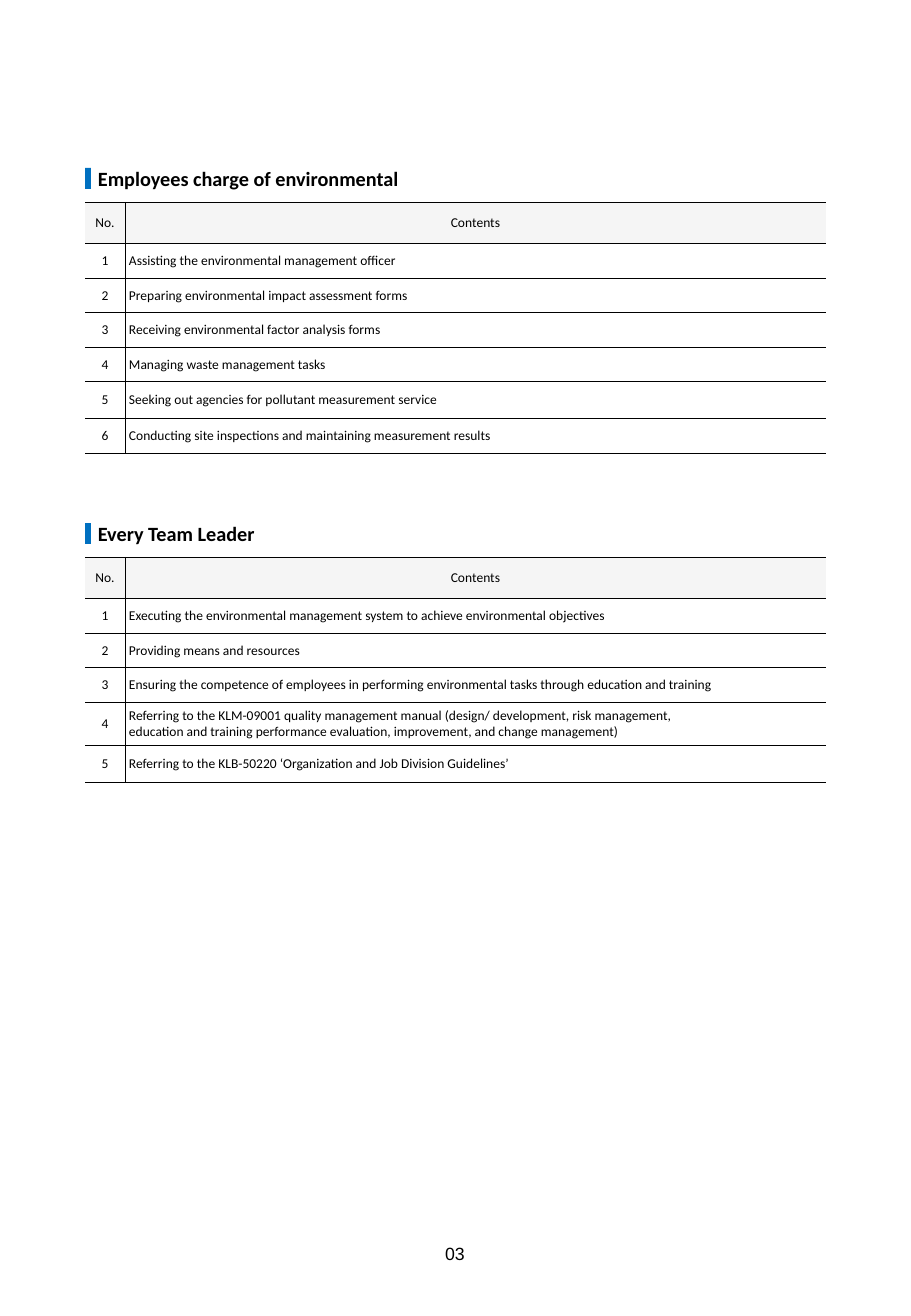
from lxml.etree import SubElement
from pptx import Presentation
from pptx.dml.color import RGBColor
from pptx.enum.shapes import MSO_SHAPE as Preset
from pptx.enum.text import MSO_ANCHOR as Anchor, PP_ALIGN as Align
from pptx.oxml.ns import qn
from pptx.util import Pt

PX = 7526
COLORS = {"ink": "000000", "accent": "0070C0", "header": "F5F5F5", "paper": "FFFFFF"}
HEADER_HEIGHT = 41
NUMBER_WIDTH = 40

SECTIONS = [
    (160, "Employees charge of environmental", [
        (35, "Assisting the environmental management officer"),
        (34, "Preparing environmental impact assessment forms"),
        (35, "Receiving environmental factor analysis forms"),
        (34, "Managing waste management tasks"),
        (37, "Seeking out agencies for pollutant measurement service"),
        (35, "Conducting site inspections and maintaining measurement results"),
    ]),
    (515, "Every Team Leader", [
        (35, "Executing the environmental management system to achieve environmental objectives"),
        (34, "Providing means and resources"),
        (35, "Ensuring the competence of employees in performing environmental tasks "
             "through education and training"),
        (43, "Referring to the KLM-09001 quality management manual "
             "(design/ development, risk management,\n"
             "education and training performance evaluation, improvement, and change management)"),
        (37, "Referring to the KLB-50220 ‘Organization and Job Division Guidelines’"),
    ]),
]


def px(*lengths):
    """Turn pixel lengths into EMU."""
    return [length * PX for length in lengths]


def color(name):
    """Look up a named colour."""
    return RGBColor.from_string(COLORS[name])


def write(frame, text, size=8, font="Calibri", bold=False, align=Align.LEFT):
    """Fill a text frame with formatted paragraphs, one per line."""
    frame.word_wrap = True
    frame.text = text
    for paragraph in frame.paragraphs:
        paragraph.alignment = align
        style = paragraph.runs[0].font
        style.size, style.name, style.bold = Pt(size), font, bold
        style.color.rgb = color("ink")


def set_borders(cell, drawn):
    """Draw thin lines on the given sides of a cell and none on the others."""
    properties = cell._tc.get_or_add_tcPr()
    for side in "LRTB":
        border = SubElement(properties, qn(f"a:ln{side}"), w=str(Pt(0.25)))
        if side in drawn:
            ink = SubElement(border, qn("a:solidFill"))
            SubElement(ink, qn("a:srgbClr"), val=COLORS["ink"])
        else:
            SubElement(border, qn("a:noFill"))


def add_duties(slide, left, top, width, duties):
    """Place the numbered table of duties."""
    rows = [(HEADER_HEIGHT, "No.", "Contents")]
    rows += [(height, str(number), duty) for number, (height, duty) in enumerate(duties, 1)]
    total = sum(height for height, _, _ in rows)
    table = slide.shapes.add_table(len(rows), 2, *px(left, top, width, total)).table
    table.first_row = table.horz_banding = False
    table.columns[0].width, table.columns[1].width = px(NUMBER_WIDTH, width - NUMBER_WIDTH)
    for row, (height, *texts) in enumerate(rows):
        table.rows[row].height = height * PX
        for column, text in enumerate(texts):
            cell = table.cell(row, column)
            is_duty = row > 0 and column == 1
            set_borders(cell, "LTB" if column else "RTB")
            cell.fill.solid()
            cell.fill.fore_color.rgb = color("paper" if row else "header")
            cell.vertical_anchor = Anchor.MIDDLE
            cell.margin_left, cell.margin_right, cell.margin_top, cell.margin_bottom = px(
                4 if is_duty else 1, 1, 1, 0)
            write(cell.text_frame, text, align=Align.LEFT if is_duty else Align.CENTER)


def add_section(slide, left, top, width, title, duties):
    """Place a heading with its accent bar above a table of duties."""
    add_duties(slide, left, top + 42, width, duties)
    heading = slide.shapes.add_textbox(*px(left + 1, top, 457, 36))
    write(heading.text_frame, title, size=12, bold=True)
    bar = slide.shapes.add_shape(Preset.RECTANGLE, *px(left, top + 8, 6, 21))
    bar.shadow.inherit = False
    bar.fill.solid()
    bar.fill.fore_color.rgb = color("accent")
    bar.line.fill.background()


def add_page_number(slide, left, top, width, height, number):
    """Place the centred page number."""
    footer = slide.shapes.add_textbox(*px(left, top, width, height))
    write(footer.text_frame, number, size=10.5, font="Arial", align=Align.CENTER)


def main():
    """Build the page and save it."""
    deck = Presentation()
    deck.slide_width, deck.slide_height = px(911, 1316)
    slide = deck.slides.add_slide(deck.slide_layouts[6])
    add_page_number(slide, 382, 1237, 146, 35, "03")
    for top, title, duties in SECTIONS:
        add_section(slide, 85, top, 741, title, duties)
    deck.save("out.pptx")


if __name__ == "__main__":
    main()
